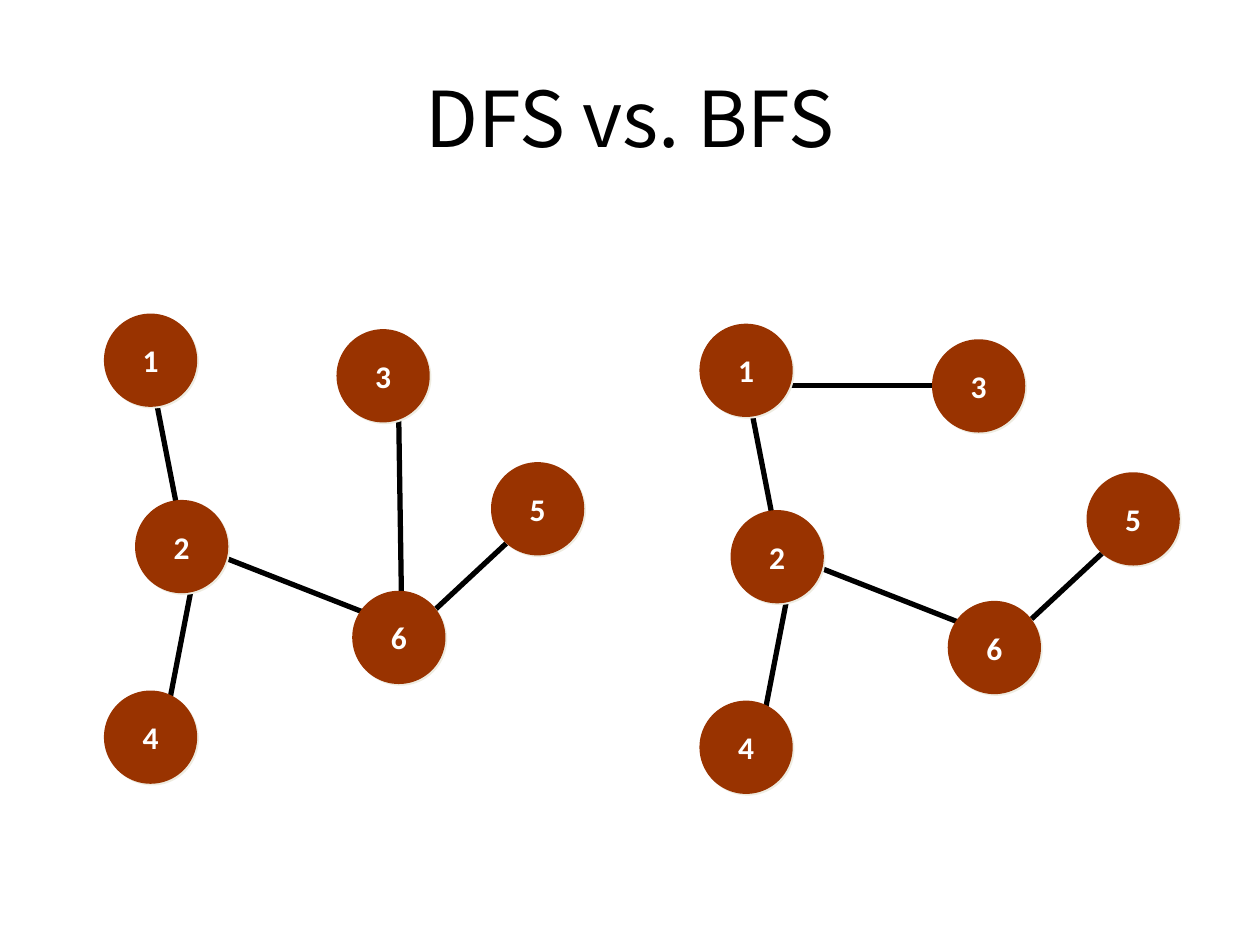
from lxml.etree import SubElement
from pptx import Presentation
from pptx.dml.color import RGBColor
from pptx.enum.shapes import MSO_CONNECTOR, MSO_SHAPE
from pptx.enum.text import MSO_ANCHOR, PP_ALIGN
from pptx.oxml.ns import qn
from pptx.util import Pt

NODE_SIZE = 53.3
NODES = {
    "1": (0, 0),
    "3": (132.9, 8.9),
    "2": (17.8, 106.5),
    "4": (0, 215.4),
    "6": (141.9, 158.4),
    "5": (221.2, 84.9),
}
SHARED_EDGES = [
    ((27, 35.4), (44.3, 123.9)),
    ((52.9, 141.9), (34.2, 238.4)),
    ((176, 181.5), (249.5, 113.1)),
    ((176, 181.5), (45.7, 130.4)),
]
DFS_EDGE = ((168.1, 35.4), (170.3, 181.5))
BFS_EDGE = ((35.2, 35.3), (141.7, 35.3))
DFS_ORIGIN = (59.4, 179.2)
BFS_ORIGIN = (399.7, 185)


def color(value):
    """Return the colour for a hex string."""
    return RGBColor.from_string(value)


def write_text(shape, text, *, size, font, fill, bold=False, wrap=True):
    """Write centred text with the given format into a shape."""
    frame = shape.text_frame
    frame.word_wrap = wrap
    frame.vertical_anchor = MSO_ANCHOR.MIDDLE
    paragraph = frame.paragraphs[0]
    paragraph.alignment = PP_ALIGN.CENTER
    run = paragraph.add_run()
    run.text = text
    run.font.size = Pt(size)
    run.font.name = font
    run.font.bold = bold
    run.font.color.rgb = color(fill)


def add_title(slide, text):
    """Place and fill the title placeholder."""
    title = slide.shapes.title
    title.left, title.top, title.width, title.height = map(Pt, (36, 21.6, 648, 90))
    write_text(title, text, size=44, font="Noto Sans CJK SC", fill="000000")


def add_edge(slide, origin, start, end):
    """Draw a tree edge between two points relative to the origin."""
    points = [Pt(base + offset) for point in (start, end)
              for base, offset in zip(origin, point)]
    edge = slide.shapes.add_connector(MSO_CONNECTOR.STRAIGHT, *points)
    edge.line.width = Pt(3)
    edge.line.color.rgb = color("000000")
    SubElement(edge._element.spPr, qn("a:effectLst"))


def add_shadow(shape, fill):
    """Give a shape a small hard shadow towards the lower right."""
    shape.shadow.inherit = False
    effects = shape._element.spPr.find(qn("a:effectLst"))
    shadow = SubElement(effects, qn("a:outerShdw"), blurRad="0",
                        dist=str(Pt(1.4)), dir="2700000", algn="ctr", rotWithShape="0")
    SubElement(shadow, qn("a:srgbClr"), val=fill)


def add_node(slide, origin, label, offset):
    """Draw a numbered tree node."""
    left, top = (Pt(base + shift) for base, shift in zip(origin, offset))
    node = slide.shapes.add_shape(MSO_SHAPE.OVAL, left, top, Pt(NODE_SIZE), Pt(NODE_SIZE))
    node.fill.solid()
    node.fill.fore_color.rgb = color("993300")
    node.line.fill.background()
    add_shadow(node, "EEECE1")
    write_text(node, label, size=18, font="Calibri", fill="FFFFFF", bold=True, wrap=False)


def add_tree(slide, origin, own_edge):
    """Draw a search tree: the shared edges, its own edge, then the nodes."""
    for start, end in [*SHARED_EDGES, own_edge]:
        add_edge(slide, origin, start, end)
    for label, offset in NODES.items():
        add_node(slide, origin, label, offset)


def main():
    """Build and save the slide."""
    presentation = Presentation()
    presentation.slide_width, presentation.slide_height = Pt(720), Pt(540)
    slide = presentation.slides.add_slide(presentation.slide_layouts[5])
    add_title(slide, "DFS vs. BFS")
    add_tree(slide, BFS_ORIGIN, BFS_EDGE)
    add_tree(slide, DFS_ORIGIN, DFS_EDGE)
    presentation.save("out.pptx")


if __name__ == "__main__":
    main()
